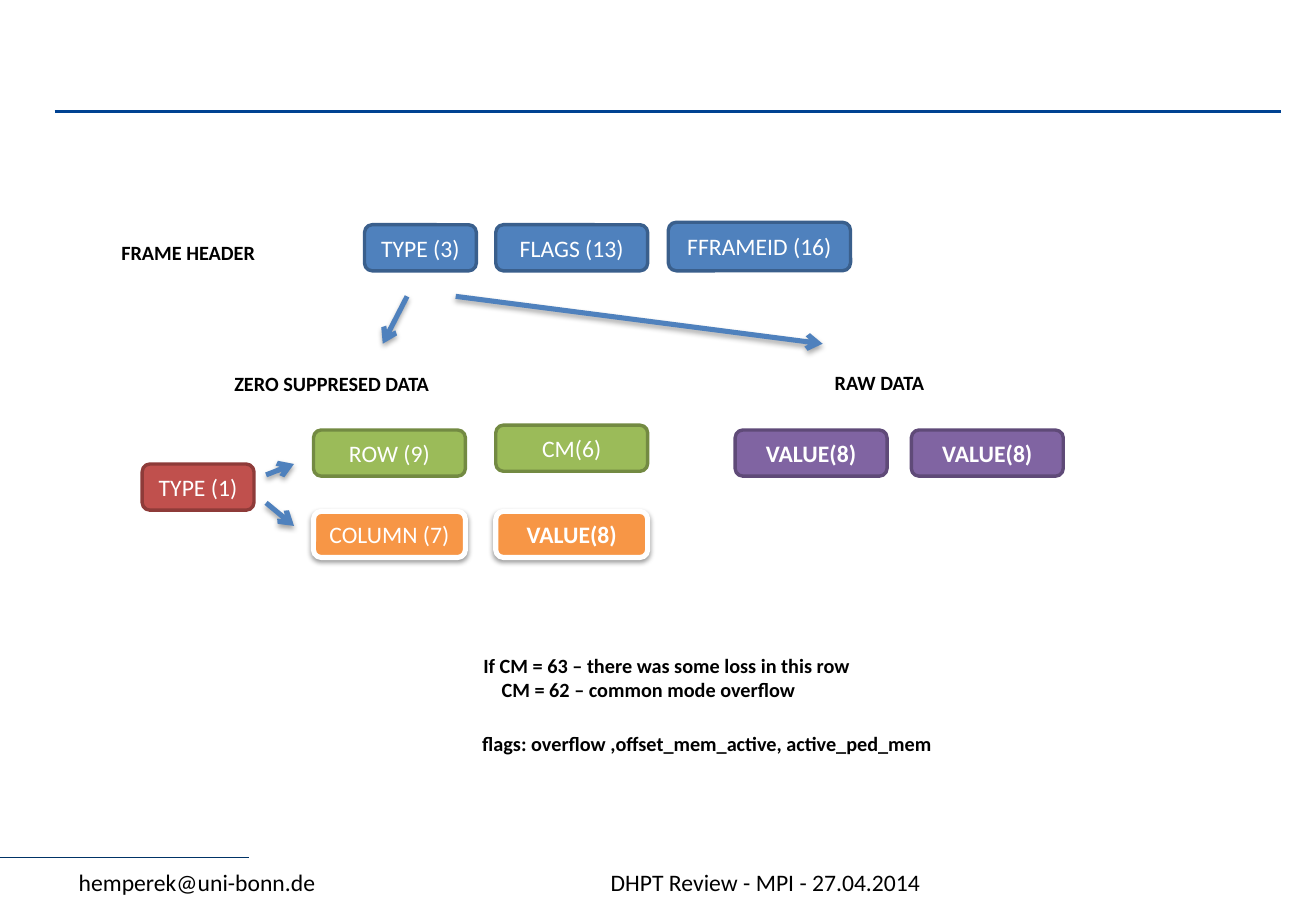
from pptx import Presentation, util as u
from pptx.dml.color import RGBColor
from pptx.enum import shapes, text
from pptx.oxml import parse_xml
from pptx.oxml.ns import nsdecls

BLACK = RGBColor(0x00, 0x00, 0x00)
WHITE = RGBColor(0xFF, 0xFF, 0xFF)
BLUE = RGBColor(0x4F, 0x81, 0xBD)
RED = RGBColor(0xC0, 0x50, 0x4D)
GREEN = RGBColor(0x9B, 0xBB, 0x59)
ORANGE = RGBColor(0xF7, 0x96, 0x46)
PURPLE = RGBColor(0x80, 0x64, 0xA2)
RULE = RGBColor(0x00, 0x42, 0x92)
NAVY = RGBColor(0x00, 0x33, 0x66)
EDGES = {
    BLUE: RGBColor(0x3A, 0x5F, 0x8C),
    RED: RGBColor(0x8E, 0x3B, 0x39),
    GREEN: RGBColor(0x73, 0x8A, 0x42),
    ORANGE: WHITE,
    PURPLE: RGBColor(0x5F, 0x4A, 0x78),
}


class Sheet:
    """Holds the text style and the current slide, and draws elements on it."""

    font = "Calibri"

    def __init__(self, slide):
        self.slide = slide

    def effect(self, shape, alpha=0, dist=0):
        """Give the shape a soft drop shadow, or none when alpha is zero."""
        shade = (
            f'<a:outerShdw blurRad="{u.Pt(3.1)}" dist="{u.Pt(dist)}" dir="5400000" rotWithShape="0">'
            f'<a:srgbClr val="000000"><a:alpha val="{alpha * 1000}"/></a:srgbClr></a:outerShdw>'
        ) if alpha else ""
        shape._element.spPr.append(
            parse_xml(f'<a:effectLst {nsdecls("a")}>{shade}</a:effectLst>'))

    def letter(self, shape, words, size, color, bold, align, anchor):
        """Fill the shape with formatted text."""
        frame = shape.text_frame
        frame.word_wrap = True
        frame.vertical_anchor = anchor
        frame.text = words
        for para in frame.paragraphs:
            para.alignment = align
            for run in para.runs:
                run.font.name = self.font
                run.font.size = u.Pt(size)
                run.font.bold = bold
                run.font.color.rgb = color
        return frame

    def label(self, words, x, y, w, h=0.4, size=12, bold=True,
              align=text.PP_ALIGN.LEFT, anchor=text.MSO_ANCHOR.TOP):
        """Add a plain text box."""
        box = self.slide.shapes.add_textbox(*map(u.Inches, (x, y, w, h)))
        return self.letter(box, words, size, BLACK, bold, align, anchor)

    def field(self, words, x, y, color, w=1.25, h=0.38):
        """Add a rounded box for one data field."""
        box = self.slide.shapes.add_shape(
            shapes.MSO_SHAPE.ROUNDED_RECTANGLE, *map(u.Inches, (x, y, w, h)))
        box.fill.solid()
        box.fill.fore_color.rgb = color
        box.line.color.rgb = EDGES[color]
        raised = color == ORANGE
        box.line.width = u.Pt(3 if raised else 2)
        self.effect(box, 38 if raised else 0, 1.6)
        self.letter(box, words, 14, WHITE, words.startswith("VALUE"),
                    text.PP_ALIGN.CENTER, text.MSO_ANCHOR.MIDDLE)

    def line(self, start, end, color, width):
        """Add a straight line."""
        link = self.slide.shapes.add_connector(
            shapes.MSO_CONNECTOR.STRAIGHT, *map(u.Inches, start + end))
        link.line.color.rgb = color
        link.line.width = u.Pt(width)
        return link

    def rule(self, start, end, color, width):
        """Add a flat dividing line."""
        self.effect(self.line(start, end, color, width))

    def arrow(self, start, end):
        """Add a raised arrow."""
        link = self.line(start, end, BLUE, 3)
        link.line._get_or_add_ln().append(
            parse_xml(f'<a:tailEnd {nsdecls("a")} type="arrow"/>'))
        self.effect(link, 35, 1.8)


def main():
    """Build the frame format slide."""
    deck = Presentation()
    deck.slide_width, deck.slide_height = u.Inches(10.83), u.Inches(7.5)
    sheet = Sheet(deck.slides.add_slide(deck.slide_layouts[6]))

    sheet.rule((0.45, 0.92), (10.54, 0.92), RULE, 1.5)
    sheet.rule((0, 7.06), (2.05, 7.06), NAVY, 0.75)
    for words, x, w, align in (
        ("hemperek@uni-bonn.de", 0.55, 3.06, text.PP_ALIGN.LEFT),
        ("DHPT Review - MPI - 27.04.2014", 3.71, 5.18, text.PP_ALIGN.CENTER),
    ):
        sheet.label(words, x, 7.06, w, size=14, bold=False, align=align,
                    anchor=text.MSO_ANCHOR.MIDDLE)

    notes = sheet.label("If CM = 63 – there was some loss in this row\n"
                        "CM = 62 – common mode overflow", 3.88, 5.33, 3.26, 0.71)
    notes.paragraphs[1]._p.get_or_add_pPr().set("marL", str(u.Inches(0.15)))

    sheet.field("TYPE (3)", 3, 1.85, BLUE, w=0.92)
    sheet.field("FLAGS (13)", 4.08, 1.85, BLUE)
    sheet.field("FFRAMEID (16)", 5.5, 1.83, BLUE, w=1.5, h=0.4)
    sheet.field("TYPE (1)", 1.17, 3.82, RED, w=0.92)
    for words, x, y, color in (
        ("ROW (9)", 2.58, 3.54, GREEN),
        ("CM(6)", 4.08, 3.5, GREEN),
        ("COLUMN (7)", 2.58, 4.21, ORANGE),
        ("VALUE(8)", 4.08, 4.21, ORANGE),
        ("VALUE(8)", 6.05, 3.54, PURPLE),
        ("VALUE(8)", 7.5, 3.54, PURPLE),
    ):
        sheet.field(words, x, y, color)

    sheet.label("FRAME HEADER", 0.9, 1.93, 1.87)
    sheet.label("ZERO SUPPRESED DATA", 1.83, 3.01, 2.63)
    sheet.label("RAW DATA", 6.77, 3, 1.32)

    for start, end in (
        ((3.35, 2.44), (3.15, 2.83)),
        ((3.75, 2.44), (6.77, 2.83)),
        ((2.19, 4.14), (2.42, 4.33)),
        ((2.19, 3.91), (2.42, 3.82)),
    ):
        sheet.arrow(start, end)

    sheet.label("flags: overflow ,offset_mem_active, active_ped_mem",
                3.87, 5.97, 3.94, 0.3)
    deck.save("out.pptx")


if __name__ == "__main__":
    main()
